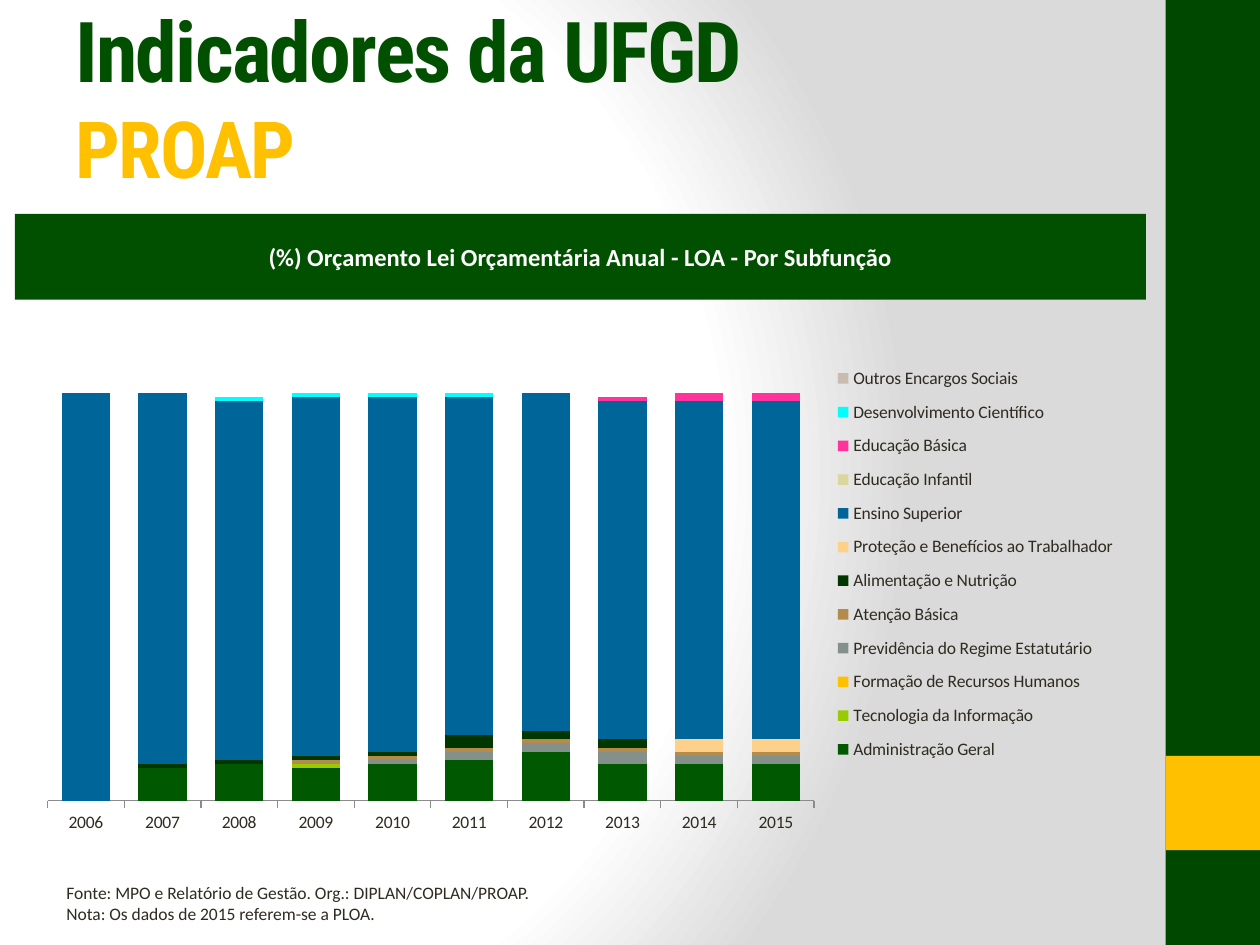
from collections import namedtuple
from dataclasses import dataclass

from lxml import etree
from pptx import Presentation
from pptx import util as u
from pptx.chart import data as chart_data
from pptx.dml.color import RGBColor
from pptx.enum import chart as charts, shapes, text
from pptx.oxml import parse_xml
from pptx.oxml.ns import qn

Box = namedtuple("Box", "left top width height")


@dataclass(frozen=True)
class Theme:
    """Colours, fonts and type sizes of the slide."""
    green: str = "005000"
    dark_green: str = "004800"
    gold: str = "FFC000"
    white: str = "FFFFFF"
    grey: str = "DADADA"
    ink: str = "2F2B20"
    axis: str = "8B8B8B"
    heading_font: str = "Roboto Condensed"
    body_font: str = "Calibri"
    title_size: int = 48
    subtitle_size: int = 45
    banner_size: int = 14
    small_size: int = 10


THEME = Theme()
YEARS = [str(year) for year in range(2006, 2016)]
NONE = [0] * len(YEARS)
SUBFUNCTIONS = [
    ("Administração Geral", "005800", [0, 8, 9, 8, 9, 10, 12, 9, 9, 9]),
    ("Tecnologia da Informação", "99CC00", [0, 0, 0, 1, 0, 0, 0, 0, 0, 0]),
    ("Formação de Recursos Humanos", "FFC000", NONE),
    ("Previdência do Regime Estatutário", "84918B", [0, 0, 0, 0, 1, 2, 2, 3, 2, 2]),
    ("Atenção Básica", "B58B4B", [0, 0, 0, 1, 1, 1, 1, 1, 1, 1]),
    ("Alimentação e Nutrição", "003600", [0, 1, 1, 1, 1, 3, 2, 2, 0, 0]),
    ("Proteção e Benefícios ao Trabalhador", "FFD08A", [0, 0, 0, 0, 0, 0, 0, 0, 3, 3]),
    ("Ensino Superior", "006699", [100, 91, 88, 88, 87, 83, 83, 83, 83, 83]),
    ("Educação Infantil", "DBD69B", NONE),
    ("Educação Básica", "FF3399", [0, 0, 0, 0, 0, 0, 0, 1, 2, 2]),
    ("Desenvolvimento Científico", "00FFFF", [0, 0, 1, 1, 1, 1, 0, 0, 0, 0]),
    ("Outros Encargos Sociais", "C9BBB0", [None] * len(YEARS)),
]


def lengths(box):
    """Convert a box in centimetres to slide lengths."""
    return [u.Cm(value) for value in box]


def style(font, size, color, name=THEME.body_font, bold=False):
    """Set size, colour, typeface and weight of a font."""
    font.size, font.name, font.bold = u.Pt(size), name, bold
    font.color.rgb = RGBColor.from_string(color)


def add_block(page, box, color):
    """Add a plain filled rectangle."""
    block = page.shapes.add_shape(shapes.MSO_SHAPE.RECTANGLE, *lengths(box))
    block.shadow.inherit = False
    block.fill.solid()
    block.fill.fore_color.rgb = RGBColor.from_string(color)
    block.line.fill.background()
    return block


def paint_background(page):
    """Fill the page with a circular gradient from white to grey."""
    page.background.fill.gradient()
    stops = "".join(
        f'<a:gs pos="{position * 1000}"><a:srgbClr val="{color}"/></a:gs>'
        for position, color in [(0, THEME.white), (75, THEME.white), (100, THEME.grey)])
    gradient = parse_xml(
        '<a:gradFill xmlns:a="http://schemas.openxmlformats.org/drawingml/2006/main" rotWithShape="1">'
        f'<a:gsLst>{stops}</a:gsLst><a:path path="circle">'
        '<a:fillToRect l="20000" t="50000" r="100000" b="50000"/></a:path></a:gradFill>')
    current = next(page.element.iter(qn("a:gradFill")))
    current.getparent().replace(current, gradient)


def add_side_band(page, box):
    """Add the green band with its gold square."""
    add_block(page, box, THEME.dark_green)
    square = Box(box.left, box.top + 0.8 * box.height, box.width, box.width)
    add_block(page, square, THEME.gold)


def add_title(page, box):
    """Add the two-line heading."""
    frame = page.shapes.add_textbox(*lengths(box)).text_frame
    frame.word_wrap = True
    frame.vertical_anchor = text.MSO_ANCHOR.MIDDLE
    para = frame.paragraphs[0]
    lines = [("Indicadores da UFGD", THEME.title_size, THEME.green),
             ("PROAP", THEME.subtitle_size, THEME.gold)]
    for index, (words, size, color) in enumerate(lines):
        if index:
            para.add_line_break()
        span = para.add_run()
        span.text = words
        style(span.font, size, color, THEME.heading_font, True)
        span.font._element.set("spc", "-100")


def add_banner(page, box):
    """Add the green banner naming the chart."""
    frame = add_block(page, box, THEME.green).text_frame
    frame.word_wrap = True
    frame.vertical_anchor = text.MSO_ANCHOR.MIDDLE
    para = frame.paragraphs[0]
    para.text = "(%) Orçamento Lei Orçamentária Anual - LOA - Por Subfunção"
    para.alignment = text.PP_ALIGN.CENTER
    style(para.font, THEME.banner_size, THEME.white, bold=True)


def set_layout(parent, fractions, inner=False):
    """Give a chart part a manual layout in fractions of the chart."""
    layout = parent.find(qn("c:layout"))
    if layout is None:
        layout = etree.Element(qn("c:layout"))
        parent.insert(0 if inner else 1, layout)
    for child in list(layout):
        layout.remove(child)
    manual = etree.SubElement(layout, qn("c:manualLayout"))
    target = [("layoutTarget", "inner")] if inner else []
    modes = [("xMode", "edge"), ("yMode", "edge")]
    for tag, value in target + modes + list(zip("xywh", fractions)):
        etree.SubElement(manual, qn(f"c:{tag}")).set("val", str(value))


def add_budget_chart(page, box):
    """Add the stacked columns of the budget shares by year."""
    table = chart_data.CategoryChartData(number_format="0")
    table.categories = YEARS
    for name, _, values in SUBFUNCTIONS:
        table.add_series(name, values)
    kind = charts.XL_CHART_TYPE.COLUMN_STACKED
    chart = page.shapes.add_chart(kind, *lengths(box), table).chart
    style(chart.font, THEME.small_size, THEME.ink)
    chart.has_title = False
    plot = chart.plots[0]
    plot.gap_width, plot.overlap = 59, 100
    plot.vary_by_categories = False
    for series, (_, color, _) in zip(plot.series, SUBFUNCTIONS):
        series.format.fill.solid()
        series.format.fill.fore_color.rgb = RGBColor.from_string(color)
    values = chart.value_axis
    values.minimum_scale, values.maximum_scale = 0, 120
    values.has_major_gridlines = False
    values.visible = False
    years = chart.category_axis
    years.major_tick_mark = charts.XL_TICK_MARK.OUTSIDE
    years.format.line.color.rgb = RGBColor.from_string(THEME.axis)
    chart.has_legend = True
    chart.legend.position = charts.XL_LEGEND_POSITION.RIGHT
    chart.legend.include_in_layout = False
    set_layout(next(chart.element.iter(qn("c:plotArea"))), (0.02, 0.02, 0.69, 0.9), True)
    set_layout(chart.legend._element, (0.72, 0.1, 0.27, 0.77))


def add_source_note(page, box):
    """Add the source and the note below the chart."""
    frame = page.shapes.add_textbox(*lengths(box)).text_frame
    frame.word_wrap = True
    frame.text = ("Fonte: MPO e Relatório de Gestão. Org.: DIPLAN/COPLAN/PROAP.\n"
                  "Nota: Os dados de 2015 referem-se a PLOA.")
    for para in frame.paragraphs:
        style(para.font, THEME.small_size, THEME.ink)


def main():
    """Build the slide and save it."""
    deck = Presentation()
    deck.slide_width, deck.slide_height = u.Cm(25.4), u.Cm(19.05)
    page = deck.slides.add_slide(deck.slide_layouts[6])
    paint_background(page)
    add_side_band(page, Box(23.5, 0, 1.9, 19.05))
    add_banner(page, Box(0.3, 4.31, 22.8, 1.73))
    add_title(page, Box(1.27, 0.76, 22.43, 2.36))
    add_budget_chart(page, Box(0.51, 6.05, 22.4, 10.97))
    add_source_note(page, Box(1.09, 17.65, 21.79, 1.12))
    deck.save("out.pptx")


if __name__ == "__main__":
    main()
